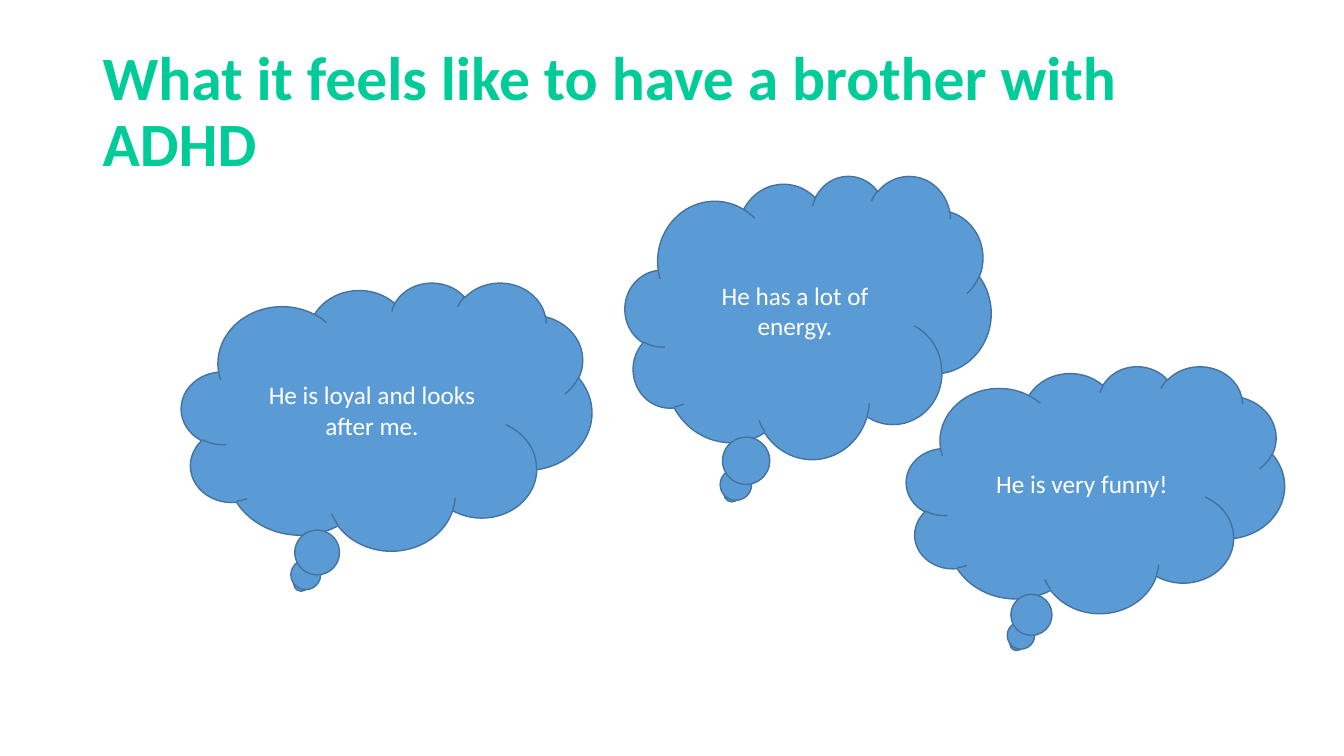
import pptx
import pptx.util
import pptx.dml.color
import pptx.enum.shapes
import pptx.enum.text

Inches = pptx.util.Inches
Pt = pptx.util.Pt
RGBColor = pptx.dml.color.RGBColor
ALIGN = pptx.enum.text.PP_ALIGN
MIDDLE = pptx.enum.text.MSO_ANCHOR.MIDDLE
CLOUD = pptx.enum.shapes.MSO_SHAPE.CLOUD_CALLOUT

GREEN = RGBColor(0x00, 0xCC, 0x99)
BLUE = RGBColor(0x5B, 0x9B, 0xD5)
EDGE = RGBColor(0x43, 0x73, 0x9E)
WHITE = RGBColor(0xFF, 0xFF, 0xFF)

HEAD = {"size": Pt(44), "bold": True, "name": "Calibri"}
BODY = {"size": Pt(18), "bold": False, "name": "Calibri"}


def write(shape, text, form, color, align, space):
    frame = shape.text_frame
    frame.word_wrap = True
    frame.vertical_anchor = MIDDLE
    para = frame.paragraphs[0]
    para.alignment = align
    para.line_spacing = space
    run = para.add_run()
    run.text = text
    for key, value in form.items():
        setattr(run.font, key, value)
    run.font.color.rgb = color


deck = pptx.Presentation()
deck.slide_width = Inches(13.33)
deck.slide_height = Inches(7.5)
slide = deck.slides.add_slide(deck.slide_layouts[6])

title = slide.shapes.add_textbox(Inches(0.92), Inches(0.4), Inches(11.5), Inches(1.45))
write(title, "What it feels like to have a brother with ADHD", HEAD, GREEN, ALIGN.LEFT, 0.9)

clouds = [
    ("He is loyal and looks after me.", 1.8, 2.8, 4.07, 2.66),
    ("He is very funny!", 8.99, 3.63, 3.75, 2.45),
    ("He has a lot of energy.", 6.2, 1.74, 3.63, 2.81),
]
for text, *box in clouds:
    cloud = slide.shapes.add_shape(CLOUD, *map(Inches, box))
    cloud.shadow.inherit = False
    cloud.fill.solid()
    cloud.fill.fore_color.rgb = BLUE
    cloud.line.color.rgb = EDGE
    cloud.line.width = Pt(1)
    write(cloud, text, BODY, WHITE, ALIGN.CENTER, 1.0)

deck.save("out.pptx")
